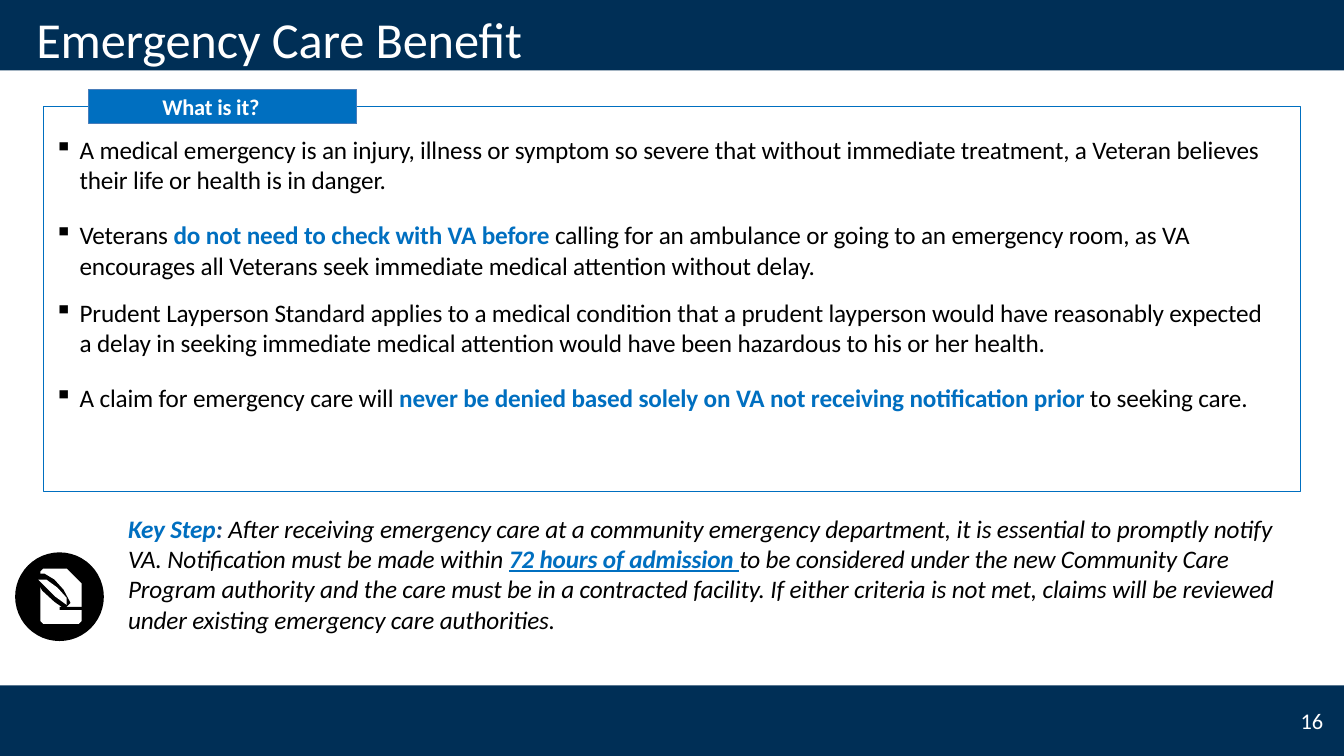
import pptx
import pptx.util
import pptx.dml.color
import pptx.enum.shapes
import pptx.enum.text
import pptx.oxml.ns
import lxml.etree

Inches = pptx.util.Inches
Pt = pptx.util.Pt
KIND = pptx.enum.shapes.MSO_SHAPE
ANCHOR = pptx.enum.text.MSO_ANCHOR
LEFT = pptx.enum.text.PP_ALIGN.LEFT

NAVY, BLUE, WHITE, BLACK = "002F56", "006FC0", "FFFFFF", "000000"

FACTS = [
    (0, ["A medical emergency is an injury, illness or symptom so severe that without "
         "immediate treatment, a Veteran believes their life or health is in danger."]),
    (18, ["Veterans ", "do not need to check with VA before ",
          "calling for an ambulance or going to an emergency room, as VA encourages all "
          "Veterans seek immediate medical attention without delay."]),
    (12, ["Prudent Layperson Standard applies to a medical condition that a prudent "
          "layperson would have reasonably expected a delay in seeking immediate medical "
          "attention would have been hazardous to his or her health."]),
    (18, ["A claim for emergency care will ",
          "never be denied based solely on VA not receiving notification prior ",
          "to seeking care."]),
]
PAGE = [(0.43, 5.64), (0.66, 5.64), (0.81, 5.79), (0.81, 6.16), (0.78, 6.19),
        (0.43, 6.19), (0.4, 6.16), (0.4, 5.67)]
PEN = [(0.33, 5.72), (0.36, 5.69), (0.44, 5.69), (0.54, 5.75), (0.63, 5.85),
       (0.7, 5.98), (0.64, 6.04), (0.54, 5.97), (0.42, 5.86), (0.36, 5.76)]
SHINE = [(0.38, 5.75), (0.46, 5.75), (0.57, 5.83), (0.66, 5.93), (0.66, 6), (0.55, 5.92)]


def rgb(code):
    """Turn a hex string into a colour."""
    return pptx.dml.color.RGBColor.from_string(code)


def paint(shape, fill=None, line=None):
    """Give a shape its fill and outline, without a shadow."""
    shape.shadow.inherit = False
    if fill:
        shape.fill.solid()
        shape.fill.fore_color.rgb = rgb(fill)
    else:
        shape.fill.background()
    if line:
        shape.line.color.rgb = rgb(line)
        shape.line.width = Pt(0.72)
    else:
        shape.line.fill.background()
    return shape


def block(slide, kind, place, **look):
    """Add a preset shape at a place given in inches."""
    shape = slide.shapes.add_shape(kind, *map(Inches, place))
    return paint(shape, **look)


def trace(slide, points, fill):
    """Add a closed outline through points given in inches."""
    spots = [(Inches(x), Inches(y)) for x, y in points]
    pen = slide.shapes.build_freeform(*spots[0])
    pen.add_line_segments(spots[1:], close=True)
    return paint(pen.convert_to_shape(), fill)


def write(para, text, size=18, color=BLACK, bold=False, italic=False, under=False):
    """Add a formatted run to a paragraph."""
    run = para.add_run()
    run.text = text
    font = run.font
    font.name, font.size = "Calibri", Pt(size)
    font.bold, font.italic, font.underline = bold, italic, under
    font.color.rgb = rgb(color)
    font._element.set("spc", "-10")


def frame(shape, left=0, anchor=ANCHOR.TOP):
    """Set the insets, wrap and anchor of a shape and return its text frame."""
    body = shape.text_frame
    body.margin_left = Inches(left)
    body.margin_right = body.margin_top = body.margin_bottom = 0
    body.word_wrap = True
    body.vertical_anchor = anchor
    body.paragraphs[0].alignment = LEFT
    return body


def box(slide, place, **look):
    """Add a text box and return its text frame."""
    return frame(slide.shapes.add_textbox(*map(Inches, place)), **look)


def bullet(para):
    """Give a paragraph a square bullet and a hanging indent."""
    props = para._p.get_or_add_pPr()
    props.set("marL", str(Inches(0.26)))
    props.set("indent", str(Inches(-0.25)))
    mark = lxml.etree.SubElement(props, pptx.oxml.ns.qn("a:buChar"))
    mark.set("char", "▪")


def list_facts(slide):
    """Write the bulleted facts, with every second part stressed."""
    body = box(slide, (0.53, 1.33, 12.13, 3))
    for index, (gap, parts) in enumerate(FACTS):
        para = body.add_paragraph() if index else body.paragraphs[0]
        bullet(para)
        para.space_before = Pt(gap)
        for turn, part in enumerate(parts):
            stress = turn % 2 == 1
            write(para, part, color=BLUE if stress else BLACK, bold=stress)


def key_step(slide):
    """Write the key step beside its icon."""
    para = box(slide, (1.27, 5.09, 11.54, 1.25)).paragraphs[0]
    write(para, "Key Step", color=BLUE, bold=True, italic=True)
    write(para, ": ", color="1F487C", bold=True, italic=True)
    write(para, "After receiving emergency care at a community emergency department, it is "
          "essential to promptly notify VA. Notification must be made within ", italic=True)
    write(para, "72 hours of admission ", color=BLUE, bold=True, italic=True, under=True)
    write(para, "to be considered under the new Community Care Program authority and the care "
          "must be in a contracted facility. If either criteria is not met, claims will be "
          "reviewed under existing emergency care authorities.", italic=True)


def icon(slide):
    """Draw the round page and pen icon."""
    block(slide, KIND.OVAL, (0.15, 5.48, 0.88, 0.88), fill=BLACK)
    trace(slide, PAGE, WHITE)
    trace(slide, PEN, BLACK)
    trace(slide, SHINE, WHITE)
    block(slide, KIND.RECTANGLE, (0.59, 6.02, 0.28, 0.03), fill=BLACK)


def head(slide):
    """Place the title on the top band, with a matching band below."""
    title = slide.shapes.title
    for top in (0, 6.8):
        band = block(slide, KIND.RECTANGLE, (0, top, 13.33, 0.7), fill=NAVY)
        title.element.addprevious(band.element)
    title.left, title.top, title.width, title.height = map(Inches, (0.36, 0.03, 6.95, 0.7))
    body = frame(title, anchor=ANCHOR.MIDDLE)
    write(body.paragraphs[0], "Emergency Care Benefit", size=36, color=WHITE)


def main():
    """Build and save the slide."""
    deck = pptx.Presentation()
    deck.slide_width, deck.slide_height = Inches(13.33), Inches(7.5)
    slide = deck.slides.add_slide(deck.slide_layouts[5])
    head(slide)
    block(slide, KIND.RECTANGLE, (0.43, 1.06, 12.47, 3.82), line=BLUE)
    label = block(slide, KIND.RECTANGLE, (0.88, 0.89, 2.66, 0.34), fill=BLUE, line="497DBA")
    body = frame(label, left=0.73, anchor=ANCHOR.MIDDLE)
    write(body.paragraphs[0], "What is it?", size=16, color=WHITE, bold=True)
    list_facts(slide)
    icon(slide)
    key_step(slide)
    number = box(slide, (12.9, 7.02, 0.43, 0.3))
    write(number.paragraphs[0], "16", size=16, color=WHITE)
    deck.save("out.pptx")


if __name__ == "__main__":
    main()
